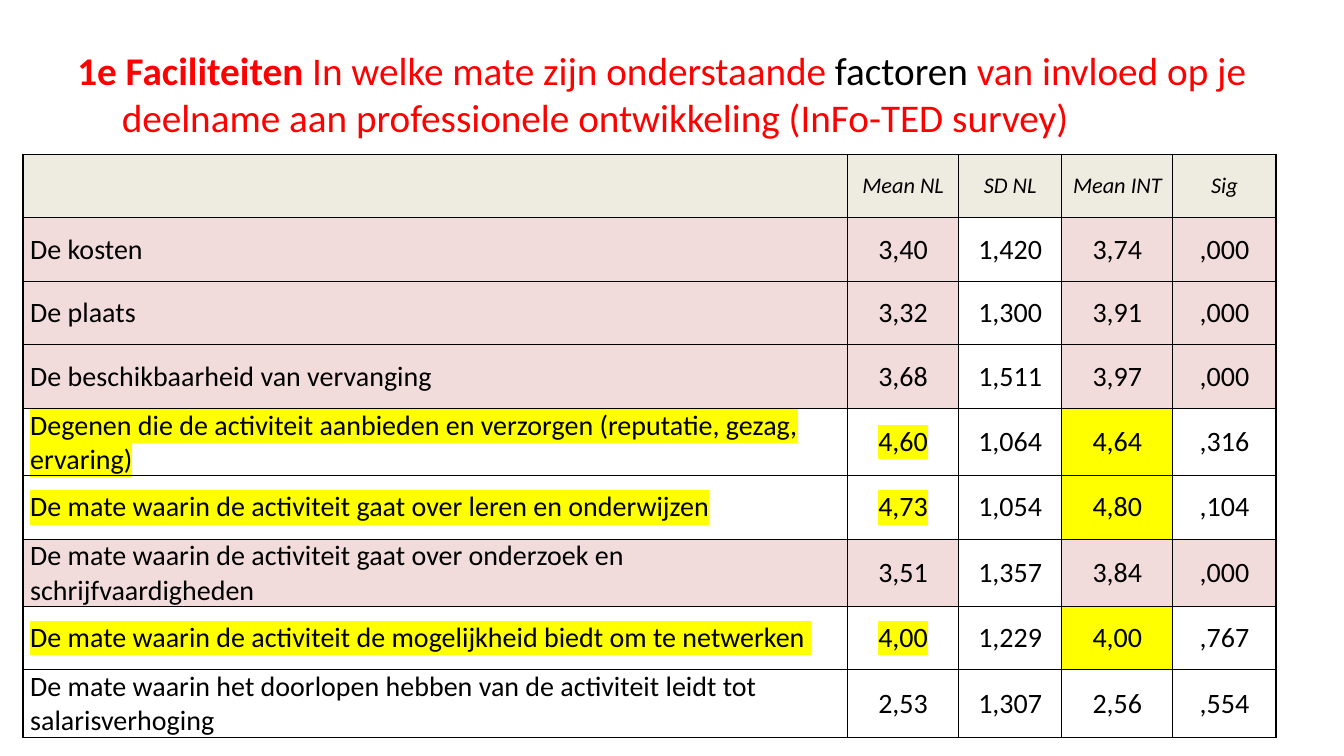
from dataclasses import dataclass

from lxml import etree
from pptx import Presentation
from pptx import util as u
from pptx.dml import color
from pptx.enum import text
from pptx.oxml import ns


@dataclass(frozen=True)
class Theme:
    font: str = "Calibri"
    title_size: int = 28
    header_size: int = 16
    body_size: int = 20
    border_width: int = 1
    ink: str = "000000"
    accent: str = "FF0000"
    header_fill: str = "EEECE1"
    significant_fill: str = "F2DCDB"
    high_fill: str = "FFFF00"


TITLE = [
    ("1e Faciliteiten ", Theme.accent, True),
    ("In welke mate zijn onderstaande ", Theme.accent, False),
    ("factoren", Theme.ink, False),
    (" van invloed op je\vdeelname aan professionele ontwikkeling (InFo-TED survey)", Theme.accent, False),
]
HEADER = ["", "Mean NL", "SD NL", "Mean INT", "Sig"]
FACTORS = [
    ["De kosten", "3,40", "1,420", "3,74", ",000"],
    ["De plaats", "3,32", "1,300", "3,91", ",000"],
    ["De beschikbaarheid van vervanging", "3,68", "1,511", "3,97", ",000"],
    ["Degenen die de activiteit aanbieden en verzorgen (reputatie, gezag, ervaring)",
     "4,60", "1,064", "4,64", ",316"],
    ["De mate waarin de activiteit gaat over leren en onderwijzen",
     "4,73", "1,054", "4,80", ",104"],
    ["De mate waarin de activiteit gaat over onderzoek en schrijfvaardigheden",
     "3,51", "1,357", "3,84", ",000"],
    ["De mate waarin de activiteit de mogelijkheid biedt om te netwerken ",
     "4,00", "1,229", "4,00", ",767"],
    ["De mate waarin het doorlopen hebben van de activiteit leidt tot salarisverhoging",
     "2,53", "1,307", "2,56", ",554"],
]
COLUMN_WIDTHS = [20.78, 2.8, 2.6, 2.8, 2.6]
ROW_HEIGHT = 1.6
LABEL, MEAN_NL, SD_NL, MEAN_INT, SIG = range(5)


class SlideBuilder:
    def __init__(self, page, theme):
        self.page = page
        self.theme = theme

    def style_span(self, span, size, ink, bold=False, italic=False, highlight=None):
        font = span.font
        font.size, font.bold, font.italic = u.Pt(size), bold, italic
        font.color.rgb = color.RGBColor.from_string(ink)
        if highlight:
            mark = etree.SubElement(font._element, ns.qn("a:highlight"))
            etree.SubElement(mark, ns.qn("a:srgbClr"), val=highlight)
        font.name = self.theme.font

    def add_title(self, pieces, left, top, width, height, hanging):
        box = self.page.shapes.add_textbox(u.Cm(left), u.Cm(top), u.Cm(width), u.Cm(height))
        frame = box.text_frame
        frame.word_wrap = True
        frame.vertical_anchor = text.MSO_ANCHOR.MIDDLE
        para = frame.paragraphs[0]
        para.text = "".join(piece for piece, _, _ in pieces[:0])
        properties = para._p.get_or_add_pPr()
        properties.set("marL", str(u.Cm(hanging)))
        properties.set("indent", str(-u.Cm(hanging)))
        for piece, ink, bold in pieces:
            for number, line in enumerate(piece.split("\v")):
                if number:
                    para.add_line_break()
                span = para.add_run()
                span.text = line
                self.style_span(span, self.theme.title_size, ink, bold)

    def add_borders(self, cell):
        properties = cell._tc.get_or_add_tcPr()
        for position, side in enumerate(("lnL", "lnR", "lnT", "lnB")):
            line = etree.Element(ns.qn(f"a:{side}"), w=str(u.Pt(self.theme.border_width)))
            fill = etree.SubElement(line, ns.qn("a:solidFill"))
            etree.SubElement(fill, ns.qn("a:srgbClr"), val=self.theme.ink)
            properties.insert(position, line)

    def fill_cell(self, cell, content, fill, centred, size, italic, highlight):
        cell.margin_left = cell.margin_right = u.Cm(0.18)
        cell.margin_top = cell.margin_bottom = 0
        cell.vertical_anchor = text.MSO_ANCHOR.MIDDLE
        if fill:
            cell.fill.solid()
            cell.fill.fore_color.rgb = color.RGBColor.from_string(fill)
        else:
            cell.fill.background()
        self.add_borders(cell)
        para = cell.text_frame.paragraphs[0]
        para.text = content
        para.alignment = text.PP_ALIGN.CENTER if centred else text.PP_ALIGN.LEFT
        for span in para.runs:
            self.style_span(span, size, self.theme.ink, italic=italic, highlight=highlight)

    def factor_colours(self, record, column):
        theme = self.theme
        if record[SIG] == ",000":
            return (None if column == SD_NL else theme.significant_fill), None
        if float(record[MEAN_NL].replace(",", ".")) >= 4:
            return (theme.high_fill if column == MEAN_INT else None,
                    theme.high_fill if column in (LABEL, MEAN_NL) else None)
        return None, None

    def add_factor_table(self, header, records, left, top):
        theme = self.theme
        rows = [header, *records]
        table = self.page.shapes.add_table(
            len(rows), len(header), u.Cm(left), u.Cm(top),
            u.Cm(sum(COLUMN_WIDTHS)), u.Cm(ROW_HEIGHT * len(rows))).table
        table.first_row = table.horz_banding = False
        for column, width in zip(table.columns, COLUMN_WIDTHS):
            column.width = u.Cm(width)
        for index, record in enumerate(rows):
            table.rows[index].height = u.Cm(ROW_HEIGHT)
            is_header = index == 0
            size = theme.header_size if is_header else theme.body_size
            for column, content in enumerate(record):
                fill, highlight = ((theme.header_fill, None) if is_header
                                   else self.factor_colours(record, column))
                self.fill_cell(table.cell(index, column), content, fill,
                               column != LABEL, size, is_header, highlight)


def main():
    deck = Presentation()
    deck.slide_width, deck.slide_height = u.Cm(33.87), u.Cm(19.05)
    builder = SlideBuilder(deck.slides.add_slide(deck.slide_layouts[6]), Theme())
    builder.add_title(TITLE, 1.7, 0.76, 30.48, 3.18, hanging=1.12)
    builder.add_factor_table(HEADER, FACTORS, 0.58, 3.89)
    deck.save("out.pptx")


if __name__ == "__main__":
    main()
